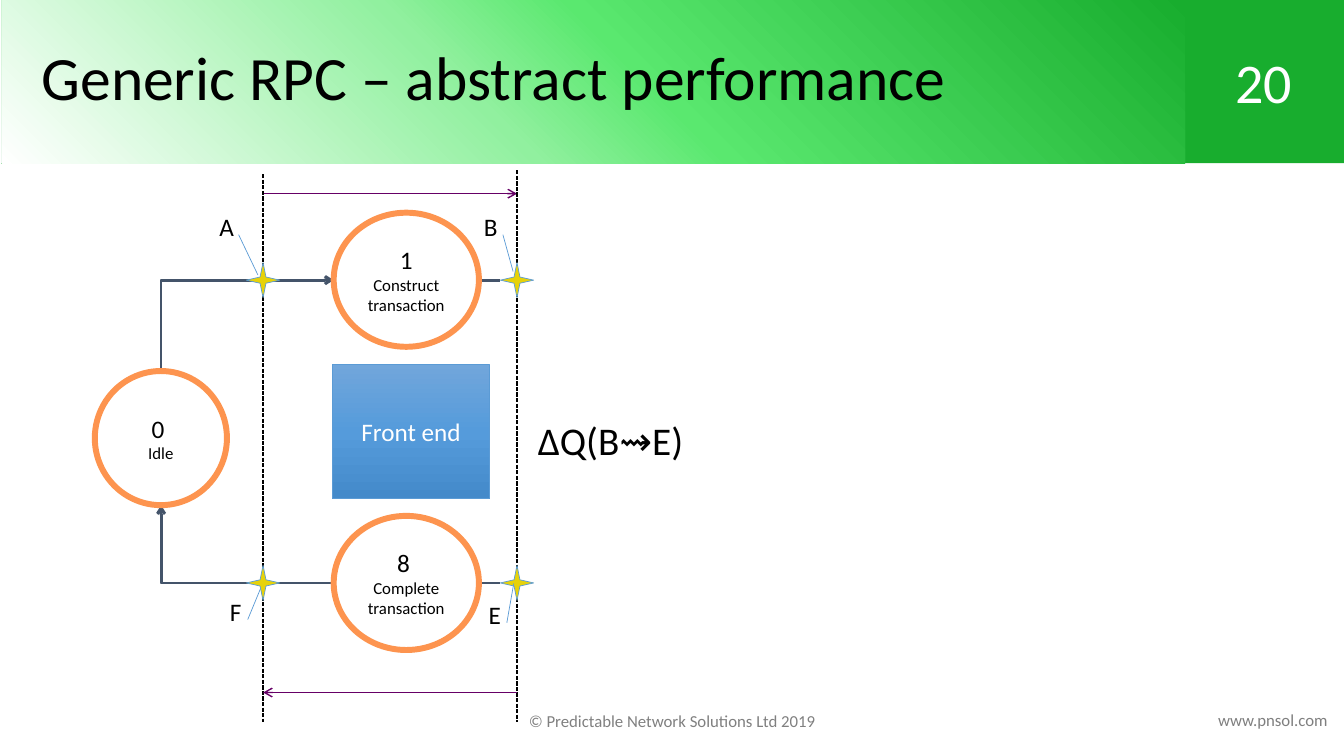
from lxml.etree import SubElement
from pptx import Presentation
from pptx.dml.color import RGBColor
from pptx.enum.dml import MSO_LINE
from pptx.enum.shapes import MSO_CONNECTOR, MSO_SHAPE
from pptx.enum.text import MSO_ANCHOR, PP_ALIGN
from pptx.oxml import parse_xml
from pptx.oxml.ns import nsdecls, qn
from pptx.util import Cm, Pt

COLOURS = {
    "black": "000000", "white": "FFFFFF", "grey": "808080", "url": "7F7F7F",
    "green": "18AD2E", "flow": "44546A", "ring": "FD944F", "span": "660066",
    "star": "E7D209", "blue": "5B9BD5",
}
TITLE_STOPS = [(0, "FFFFFF"), (40, "91F09F"), (54, "5AE86F"), (100, "18AD2E")]
FRONT_STOPS = [(0, "71A6DB"), (50, "559BDB"), (100, "448ACA")]
CORNER_GLOW = '<a:path path="circle"><a:fillToRect t="100000" r="100000"/></a:path>'
DOWNWARD = '<a:lin ang="5400000" scaled="0"/>'

# Positions in centimetres that several parts share
IDLE_X, LEFT_X, STATE_X, STATE_END, RIGHT_X = 4.06, 6.63, 8.41, 12.07, 13.03
TOP_Y, BOTTOM_Y, IDLE_TOP, IDLE_BOTTOM = 7.06, 14.69, 9.35, 12.73
STATE_HEIGHT = 3.38
STAR_SIZE = (0.84, 0.89)
LABEL_SIZE = (0.76, 0.71)

# Text: box, wording, size, colour
LABELS = [
    ((12.8, 17.78, 8.28, 0.76), "© Predictable Network Solutions Ltd 2019", 12, "grey"),
    ((30.3, 17.75, 3.56, 0.76), "www.pnsol.com", 12, "url"),
    ((13.11, 10.36, 4.55, 1.45), "∆Q(B⇝E)", 28, "black"),
]
# States: left, top, width, paragraphs of (wording, size)
STATES = [
    (STATE_X, 5.36, 3.66, [[("1 ", 18), ("Construct transaction", 12)]]),
    (2.39, IDLE_TOP, 3.33, [[("0 ", 18)], [("Idle", 12)]]),
    (STATE_X, 13, 3.66, [[("8 ", 18)], [("Complete transaction", 12)]]),
]
# Elbows: left, top, right, bottom, rotation, flips, arrow end
ELBOWS = [
    (IDLE_X, IDLE_BOTTOM, 6.55, BOTTOM_Y, 270, ["flipH"], None),
    (IDLE_X, TOP_Y, LEFT_X, IDLE_TOP, 90, ["flipH", "flipV"], None),
    (IDLE_X, IDLE_BOTTOM, STATE_X, BOTTOM_Y, 180, [], "tailEnd"),
    (IDLE_X, TOP_Y, STATE_X, IDLE_TOP, 90, ["flipH", "flipV"], "tailEnd"),
]
# Straight lines: from x, from y, to x, to y, colour, points, dash, arrow end
LINES = [
    (STATE_END, TOP_Y, 12.6, TOP_Y, "flow", 2, None, None),
    (STATE_END, BOTTOM_Y, 12.6, BOTTOM_Y, "flow", 2, None, None),
    (LEFT_X, 4.88, RIGHT_X, 4.88, "span", 1, None, "tailEnd"),
    (RIGHT_X, 4.29, RIGHT_X, 18.19, "black", 1, MSO_LINE.SQUARE_DOT, None),
    (LEFT_X, 4.39, LEFT_X, 18.19, "black", 1, MSO_LINE.SQUARE_DOT, None),
    (LEFT_X, 17.45, RIGHT_X, 17.45, "span", 1, None, "headEnd"),
]
# Observation points: star centre, letter, letter corner, pointer end (y, x)
POINTS = [
    (LEFT_X, TOP_Y, "A", 5.33, 5.36, (2.21, 1.54)),
    (RIGHT_X, BOTTOM_Y, "E", 12.09, 15.14, (-0.62, 1.13)),
    (RIGHT_X, TOP_Y, "B", 11.99, 5.36, (2.09, 1.24)),
    (LEFT_X, BOTTOM_Y, "F", 5.56, 15.06, (-0.31, 1.32)),
]


def colour(name):
    return RGBColor.from_string(COLOURS[name])


def write(shape, paragraphs, ink="black", align=PP_ALIGN.CENTER, spacing=None, **frame):
    text = shape.text_frame
    for key, value in {"word_wrap": True, **frame}.items():
        setattr(text, key, value)
    for index, runs in enumerate(paragraphs):
        para = text.add_paragraph() if index else text.paragraphs[0]
        para.alignment, para.line_spacing = align, spacing
        for wording, size in runs:
            run = para.add_run()
            run.text = wording
            for key, value in {"name": "Calibri", "size": Pt(size)}.items():
                setattr(run.font, key, value)
            run.font.color.rgb = colour(ink)


def add_part(page, kind, box, fill=None, line=None, points=0.5):
    shape = page.shapes.add_shape(kind, *map(Cm, box))
    shape.shadow.inherit = False
    if fill:
        shape.fill.solid()
        shape.fill.fore_color.rgb = colour(fill)
    else:
        shape.fill.background()
    if line:
        shape.line.color.rgb = colour(line)
        shape.line.width = Pt(points)
    else:
        shape.line.fill.background()
    return shape


def add_gradient(shape, stops, direction):
    stop_xml = "".join(
        f'<a:gs pos="{percent * 1000}"><a:srgbClr val="{shade}"/></a:gs>'
        for percent, shade in stops)
    gradient = parse_xml(f'<a:gradFill {nsdecls("a")} rotWithShape="1">'
                         f'<a:gsLst>{stop_xml}</a:gsLst>{direction}</a:gradFill>')
    properties = shape._element.spPr
    properties.replace(properties.find(qn("a:noFill")), gradient)


def add_line(page, ends, ink, points, dash=None, arrow=None):
    line = page.shapes.add_connector(MSO_CONNECTOR.STRAIGHT, *map(Cm, ends))
    line.line.color.rgb = colour(ink)
    line.line.width = Pt(points)
    if dash:
        line.line.dash_style = dash
    if arrow:
        SubElement(line.line._get_or_add_ln(), qn(f"a:{arrow}"), type="arrow")
    SubElement(line._element.spPr, qn("a:effectLst"))
    return line


def add_elbow(page, left, top, right, bottom, turn, flips, arrow):
    # A quarter turn swaps width and height about the same centre
    width, height = right - left, bottom - top
    if turn % 180:
        middle_x, middle_y = (left + right) / 2, (top + bottom) / 2
        width, height = height, width
        left, top = middle_x - width / 2, middle_y - height / 2
    elbow = add_line(page, (left, top, left + width, top + height), "flow", 2, arrow=arrow)
    properties = elbow._element.spPr
    properties.find(qn("a:prstGeom")).set("prst", "bentConnector2")
    frame = properties.find(qn("a:xfrm"))
    frame.set("rot", str(turn * 60000))
    for flip in flips:
        frame.set(flip, "1")


def main():
    deck = Presentation()
    deck.slide_width, deck.slide_height = Cm(33.87), Cm(19.05)
    page = deck.slides.add_slide(deck.slide_layouts[6])

    # Header
    badge = add_part(page, MSO_SHAPE.RECTANGLE, (29.77, -0.03, 4.14, 4.14), "green")
    write(badge, [[("20", 40)]], "white", vertical_anchor=MSO_ANCHOR.MIDDLE)
    title = add_part(page, MSO_SHAPE.RECTANGLE, (0.05, -0.03, 29.82, 4.14))
    add_gradient(title, TITLE_STOPS, CORNER_GLOW)
    write(title, [[("Generic RPC – abstract performance", 44)]], align=PP_ALIGN.LEFT,
          spacing=0.9, margin_left=Cm(1), vertical_anchor=MSO_ANCHOR.MIDDLE)

    # Flow and time spans
    for elbow in ELBOWS:
        add_elbow(page, *elbow)
    for *ends, ink, points, dash, arrow in LINES:
        add_line(page, ends, ink, points, dash, arrow)

    # Front end and states
    front = add_part(page, MSO_SHAPE.RECTANGLE, (8.38, 9.19, 3.96, 3.38), line="blue")
    add_gradient(front, FRONT_STOPS, DOWNWARD)
    write(front, [[("Front end", 18)]], "white", vertical_anchor=MSO_ANCHOR.MIDDLE)
    for left, top, width, paragraphs in STATES:
        state = add_part(page, MSO_SHAPE.OVAL, (left, top, width, STATE_HEIGHT),
                         line="ring", points=4.25)
        write(state, paragraphs, vertical_anchor=MSO_ANCHOR.MIDDLE)

    # Observation points
    for x, y, letter, left, top, pointer in POINTS:
        width, height = STAR_SIZE
        add_part(page, MSO_SHAPE.STAR_4_POINT,
                 (x - width / 2, y - height / 2, width, height), "star", "blue")
        label = add_part(page, MSO_SHAPE.LINE_CALLOUT_1_NO_BORDER,
                         (left, top, *LABEL_SIZE), line="blue")
        for index, value in enumerate((0.78, 0.9, *pointer)):
            label.adjustments[index] = value
        write(label, [[(letter, 18)]], vertical_anchor=MSO_ANCHOR.MIDDLE,
              margin_left=0, margin_right=0)

    # Footer and formula
    for box, wording, size, ink in LABELS:
        write(page.shapes.add_textbox(*map(Cm, box)), [[(wording, size)]], ink)

    deck.save("out.pptx")


if __name__ == "__main__":
    main()
